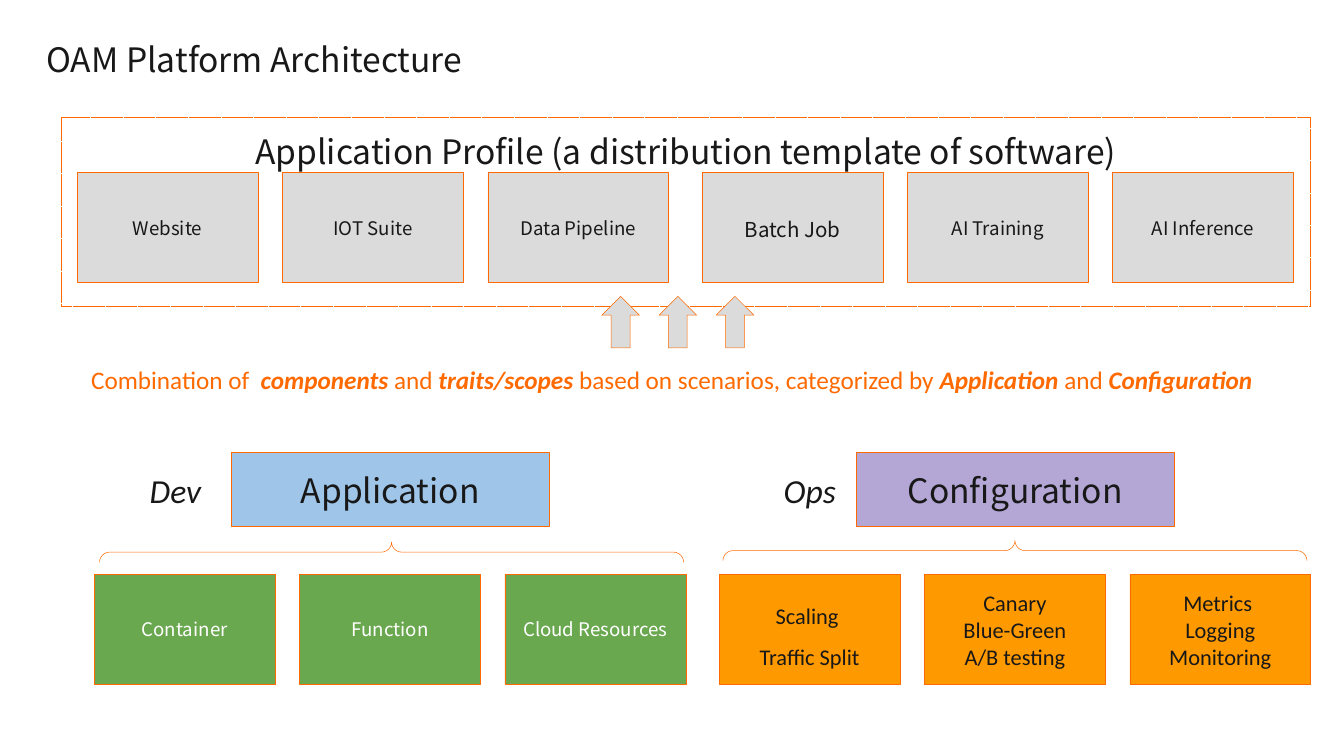
import pptx
import pptx.util
import pptx.dml.color
import pptx.enum.dml
import pptx.enum.shapes
import pptx.enum.text
from dataclasses import dataclass

Inches = pptx.util.Inches
Shape = pptx.enum.shapes.MSO_SHAPE
Align = pptx.enum.text.PP_ALIGN
Anchor = pptx.enum.text.MSO_ANCHOR


@dataclass(frozen=True)
class Theme:
    sans: str = "Noto Sans CJK SC"
    body: str = "Calibri"
    heading: float = 48
    note: float = 36
    detail: float = 32
    batch: float = 29.3
    label: float = 26.7
    ink: str = "181818"
    white: str = "FFFFFF"
    accent: str = "FF6A00"
    gray: str = "DBDBDB"
    blue: str = "9FC5E8"
    purple: str = "B4A7D6"
    green: str = "6AA84F"
    orange: str = "FF9900"


T = Theme()
rgb = pptx.dml.color.RGBColor.from_string


def write(s, text, size=T.label, font=T.sans, color=T.ink, align=Align.CENTER,
          anchor=Anchor.MIDDLE, italic=False, spacing=None):
    """Fill s with text: newlines split paragraphs, asterisks enclose bold italics."""
    tf = s.text_frame
    tf.word_wrap = True
    tf.auto_size = pptx.enum.text.MSO_AUTO_SIZE.NONE
    tf.vertical_anchor = anchor
    tf.margin_left = tf.margin_right = tf.margin_top = tf.margin_bottom = Inches(0.27)
    for i, line in enumerate(text.split("\n")):
        p = tf.add_paragraph() if i else tf.paragraphs[0]
        p.alignment = align
        if spacing:
            p.line_spacing = spacing
        for j, part in enumerate(line.split("*")):
            if not part:
                continue
            r = p.add_run()
            r.text = part
            r.font.name = font
            r.font.size = pptx.util.Pt(size)
            r.font.color.rgb = rgb(color)
            r.font.bold = j % 2 == 1
            r.font.italic = italic or j % 2 == 1


def add_outlined(kind, x, y, w, h, fill=None):
    s = sp.add_shape(kind, Inches(x), Inches(y), Inches(w), Inches(h))
    s.shadow.inherit = False
    if fill:
        s.fill.solid()
        s.fill.fore_color.rgb = rgb(fill)
    else:
        s.fill.background()
    s.line.color.rgb = rgb(T.accent)
    s.line.width = pptx.util.Pt(0.75)
    return s


prs = pptx.Presentation()
prs.slide_width, prs.slide_height = Inches(26.67), Inches(15)
slide = prs.slides.add_slide(prs.slide_layouts[5])
sp = slide.shapes

title = sp.title
title.left, title.top = Inches(0.65), Inches(0.66)
title.width, title.height = Inches(10), Inches(1.02)
write(title, "OAM Platform Architecture", size=T.heading, align=Align.LEFT)

# Application profile frame
profile = add_outlined(Shape.RECTANGLE, 1.21, 2.32, 24.8, 3.76)
profile.line.dash_style = pptx.enum.dml.MSO_LINE.ROUND_DOT
write(profile, "Application Profile (a distribution template of software)",
      size=T.heading, anchor=Anchor.TOP)

# Two rows of six boxes, each in two groups of three
BOX_W, BOX_H, PITCH, GROUP = 3.59, 2.19, 4.075, 12.4
dev = dict(color=T.white)
ops = dict(size=T.detail, font=T.body)
rows = [
    (1.53, 3.42, [
        ("Website", T.gray, {}),
        ("IOT Suite", T.gray, {}),
        ("Data Pipeline", T.gray, {}),
        ("Batch Job", T.gray, dict(size=T.batch, spacing=1.15)),
        ("AI Training", T.gray, {}),
        ("AI Inference", T.gray, {}),
    ]),
    (1.87, 11.39, [
        ("Container", T.green, dev),
        ("Function", T.green, dev),
        ("Cloud Resources", T.green, dev),
        ("Scaling \nTraffic Split", T.orange, dict(ops, spacing=1.5)),
        ("Canary\nBlue-Green\nA/B testing", T.orange, ops),
        ("Metrics \nLogging Monitoring", T.orange, ops),
    ]),
]
for left, top, boxes in rows:
    for i, (text, fill, style) in enumerate(boxes):
        x = left + i // 3 * GROUP + i % 3 * PITCH
        write(add_outlined(Shape.RECTANGLE, x, top, BOX_W, BOX_H, fill), text, **style)

# Arrows up to the profile
for i in range(3):
    add_outlined(Shape.UP_ARROW, 11.94 + i * 1.135, 5.88, 0.75, 1.02, T.gray)

combination = sp.add_textbox(Inches(0.23), Inches(7.02), Inches(26.2), Inches(1.02))
write(combination, "Combination of  *components* and *traits/scopes* based on scenarios, "
      "categorized by *Application* and *Configuration*",
      size=T.note, font=T.body, color=T.accent)

# Dev and Ops halves: role, heading box and brace
halves = [
    ("Dev", 2.6, "Application", 4.59, T.blue, 7.57, 5.16),
    ("Ops", 15.19, "Configuration", 16.99, T.purple, 19.94, 5.13),
]
for role, role_x, heading, box_x, fill, brace_x, brace_y in halves:
    box = add_outlined(Shape.RECTANGLE, box_x, 8.98, 6.31, 1.47, fill)
    write(box, heading, size=T.heading)
    brace = add_outlined(Shape.LEFT_BRACE, brace_x, brace_y, 0.4, 11.59)
    brace.adjustments[0] = 0.5
    brace.rotation = 90
    label = sp.add_textbox(Inches(role_x), Inches(9.21), Inches(1.76), Inches(1.02))
    write(label, role, size=T.heading, font=T.body, italic=True)

prs.save("out.pptx")
